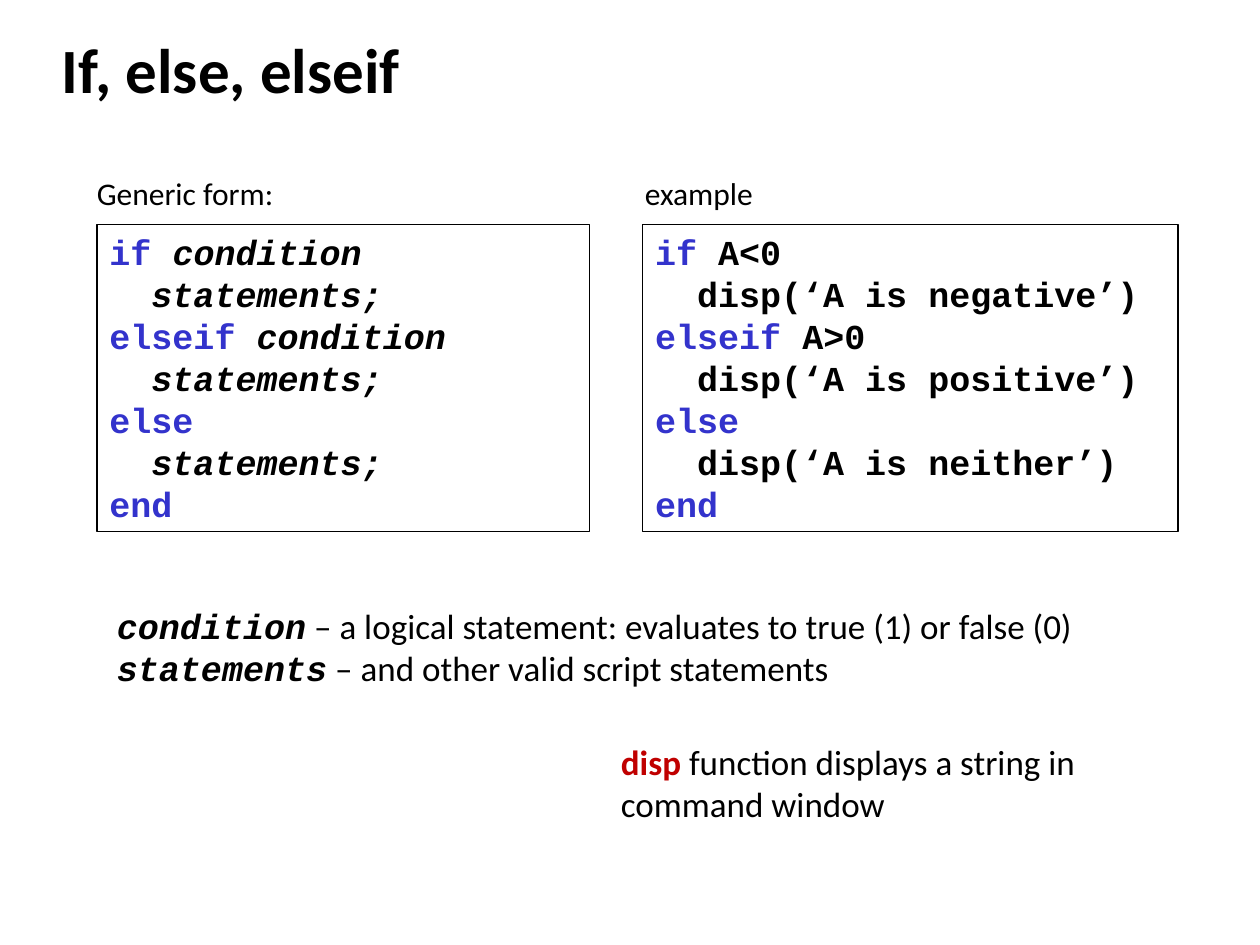
from pptx import Presentation
from pptx.dml.color import RGBColor
from pptx.enum.shapes import MSO_SHAPE
from pptx.enum.text import MSO_ANCHOR, PP_ALIGN
from pptx.util import Inches, Pt

BLACK = RGBColor(0x00, 0x00, 0x00)
WHITE = RGBColor(0xFF, 0xFF, 0xFF)
BLUE = RGBColor(0x33, 0x33, 0xCC)
RED = RGBColor(0xC0, 0x00, 0x00)
BODY_FONT, CODE_FONT = "Calibri", "Courier New"

TITLE = "If, else, elseif"

# Each code line is a (keyword, rest) pair.
GENERIC_CODE = [
    ("if", " condition"),
    ("", "  statements;"),
    ("elseif", " condition"),
    ("", "  statements;"),
    ("else", ""),
    ("", "  statements;"),
    ("end", ""),
]
EXAMPLE_CODE = [
    ("if", " A<0"),
    ("", "  disp(‘A is negative’)"),
    ("elseif", " A>0"),
    ("", "  disp(‘A is positive’)"),
    ("else", ""),
    ("", "  disp(‘A is neither’)"),
    ("end", ""),
]
# label, label left, label width, code, box left, box width, italic rest
PANELS = [
    ("Generic form:", 0.67, 1.72, GENERIC_CODE, 0.77, 3.91, True),
    ("example", 5.02, 1.15, EXAMPLE_CODE, 5.1, 4.25, False),
]
DEFINITIONS = [
    ("condition", " – a logical statement: evaluates to true (1) or false (0)"),
    ("statements", " – and other valid script statements"),
]
DISP_NOTE = ("disp", " function displays a string in command window")

LABEL_TOP, LABEL_HEIGHT = 1.33, 0.4
CODE_TOP, CODE_HEIGHT = 1.78, 2.44


def add_text_box(slide, left, top, width, height, wrap=False):
    box = slide.shapes.add_textbox(*map(Inches, (left, top, width, height)))
    box.text_frame.word_wrap = wrap
    return box.text_frame


def fill_paragraphs(frame, lines, size):
    """Write lines, each a list of (text, font name, colour, bold, italic)."""
    for index, runs in enumerate(lines):
        paragraph = frame.paragraphs[0] if index == 0 else frame.add_paragraph()
        paragraph.alignment = PP_ALIGN.LEFT
        paragraph.font.size = Pt(size)
        for text, name, color, bold, italic in runs:
            if not text:
                continue
            run = paragraph.add_run()
            run.text = text
            run.font.name = name
            run.font.color.rgb = color
            run.font.bold = bold
            run.font.italic = italic


def add_code_box(slide, left, width, code, italic):
    box = slide.shapes.add_shape(
        MSO_SHAPE.RECTANGLE, *map(Inches, (left, CODE_TOP, width, CODE_HEIGHT)))
    box.shadow.inherit = False
    box.fill.solid()
    box.fill.fore_color.rgb = WHITE
    box.line.color.rgb = BLACK
    box.line.width = Pt(0.75)
    frame = box.text_frame
    frame.word_wrap = True
    frame.vertical_anchor = MSO_ANCHOR.TOP
    fill_paragraphs(frame, [
        [(keyword, CODE_FONT, BLUE, True, False),
         (rest, CODE_FONT, BLACK, True, italic)]
        for keyword, rest in code], 20)


def main():
    presentation = Presentation()
    presentation.slide_width = Inches(10)
    presentation.slide_height = Inches(7.5)
    slide = presentation.slides.add_slide(presentation.slide_layouts[5])

    title = slide.shapes.title
    title.left, title.top, title.width, title.height = map(
        Inches, (0.39, 0.23, 9.22, 0.63))
    title.text_frame.vertical_anchor = MSO_ANCHOR.MIDDLE
    fill_paragraphs(title.text_frame,
                    [[(TITLE, BODY_FONT, BLACK, True, False)]], 36)

    for label, label_left, label_width, code, left, width, italic in PANELS:
        add_code_box(slide, left, width, code, italic)
        frame = add_text_box(slide, label_left, LABEL_TOP, label_width, LABEL_HEIGHT)
        fill_paragraphs(frame, [[(label, BODY_FONT, BLACK, False, False)]], 18)

    frame = add_text_box(slide, 0.83, 4.75, 7.86, 0.77)
    fill_paragraphs(frame, [
        [(term, CODE_FONT, BLACK, True, True),
         (meaning, BODY_FONT, BLACK, False, False)]
        for term, meaning in DEFINITIONS], 20)

    name, description = DISP_NOTE
    frame = add_text_box(slide, 4.83, 5.83, 4.67, 0.77, wrap=True)
    fill_paragraphs(frame, [[(name, BODY_FONT, RED, True, False),
                             (description, BODY_FONT, BLACK, False, False)]], 20)

    presentation.save("out.pptx")


if __name__ == "__main__":
    main()
